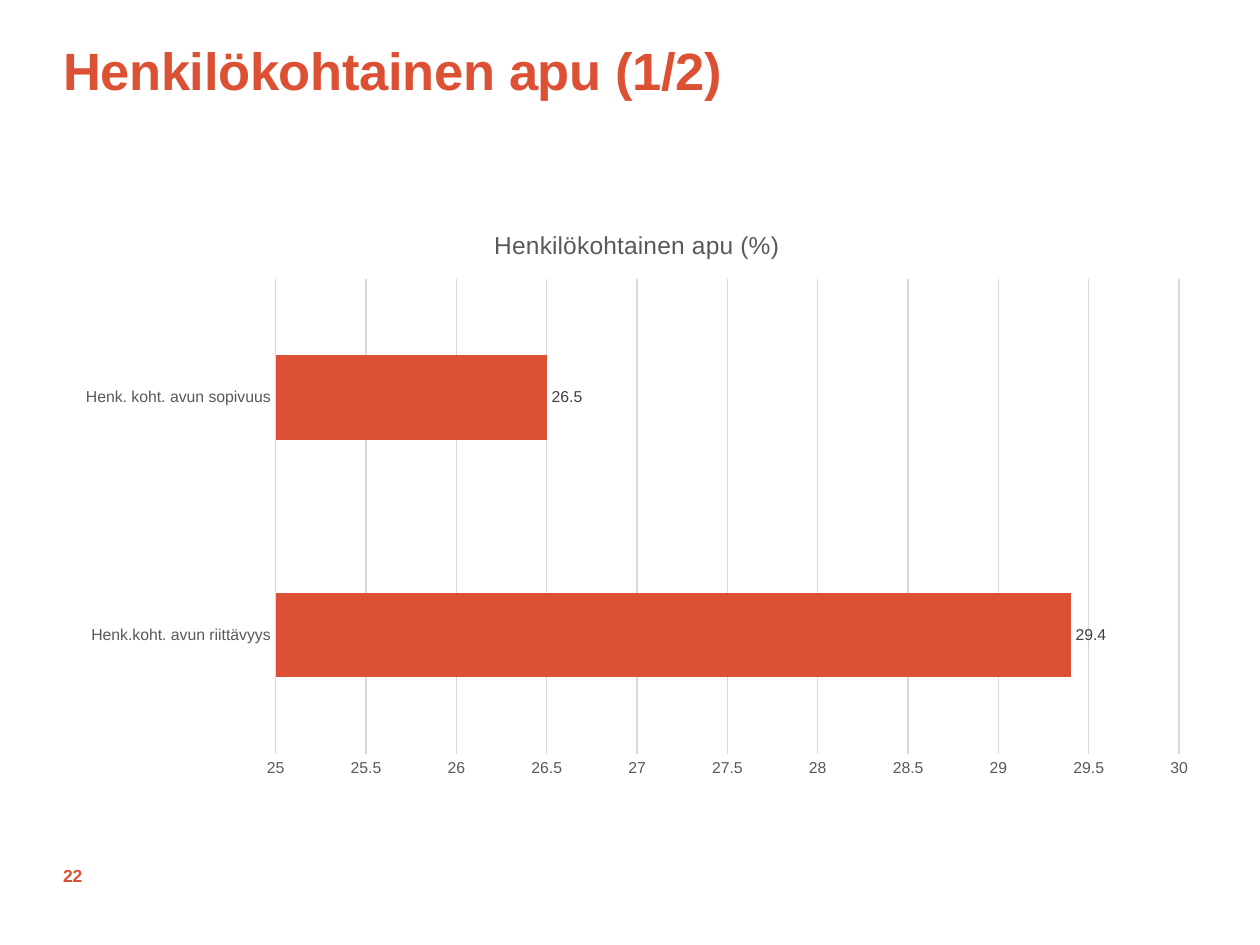
from pptx import Presentation
from pptx.chart.data import CategoryChartData
from pptx.dml.color import RGBColor
from pptx.enum import chart as ch, text as tx
from pptx.util import Inches, Pt

TITLE = "Henkilökohtainen apu (1/2)"
PAGE = "22"
HEAD = "Henkilökohtainen apu (%)"
DATA = [("Henk.koht. avun riittävyys", 29.4), ("Henk. koht. avun sopivuus", 26.5)]
RED, GREY, DARK, PALE = "DC5034", "595959", "404040", "D9D9D9"


def style(font, size, color, bold=False):
    font.name, font.size, font.bold = "Arial", Pt(size), bold
    font.color.rgb = RGBColor.from_string(color)


def rule(line):
    line.color.rgb = RGBColor.from_string(PALE)
    line.width = Pt(0.75)


def write(shape, words, size, anchor):
    frame = shape.text_frame
    frame.word_wrap = True
    frame.auto_size = tx.MSO_AUTO_SIZE.NONE
    frame.vertical_anchor = anchor
    frame.margin_left = frame.margin_right = 0
    frame.margin_top = frame.margin_bottom = 0
    para = frame.paragraphs[0]
    para.alignment = tx.PP_ALIGN.LEFT
    run = para.add_run()
    run.text = words
    style(run.font, size, RED, True)
    return run


deck = Presentation()
deck.slide_width, deck.slide_height = Inches(10), Inches(7.5)
slide = deck.slides.add_slide(deck.slide_layouts[5])

title = slide.shapes.title
title.left, title.top = Inches(0.5), Inches(0.3)
title.width, title.height = Inches(9), Inches(1.16)
run = write(title, TITLE, 30, tx.MSO_ANCHOR.TOP)
run.font._element.set("spc", "-20")

page = slide.shapes.add_textbox(Inches(0.5), Inches(6.75), Inches(0.71), Inches(0.4))
write(page, PAGE, 10, tx.MSO_ANCHOR.MIDDLE)

data = CategoryChartData()
data.categories = [name for name, _ in DATA]
data.add_series("Series 1", [value for _, value in DATA])
chart = slide.shapes.add_chart(
    ch.XL_CHART_TYPE.BAR_CLUSTERED,
    Inches(0.5), Inches(1.64), Inches(9.11), Inches(4.62), data).chart
style(chart.font, 10, "000000")
chart.has_legend = False
chart.has_title = True
head = chart.chart_title.text_frame.paragraphs[0].add_run()
head.text = HEAD
style(head.font, 14, GREY)
chart.chart_title.include_in_layout = False

cats, vals = chart.category_axis, chart.value_axis
for axis in (cats, vals):
    axis.major_tick_mark = axis.minor_tick_mark = ch.XL_TICK_MARK.NONE
    style(axis.tick_labels.font, 9, GREY)
rule(cats.format.line)
vals.format.line.fill.background()
rule(vals.major_gridlines.format.line)
vals.minimum_scale, vals.maximum_scale, vals.major_unit = 25, 30, 0.5

plot = chart.plots[0]
plot.gap_width = 182
plot.vary_by_categories = False
bars = plot.series[0]
bars.format.fill.solid()
bars.format.fill.fore_color.rgb = RGBColor.from_string(RED)
labels = bars.data_labels
labels.show_value = True
labels.position = ch.XL_LABEL_POSITION.OUTSIDE_END
style(labels.font, 9, DARK)

deck.save("out.pptx")
